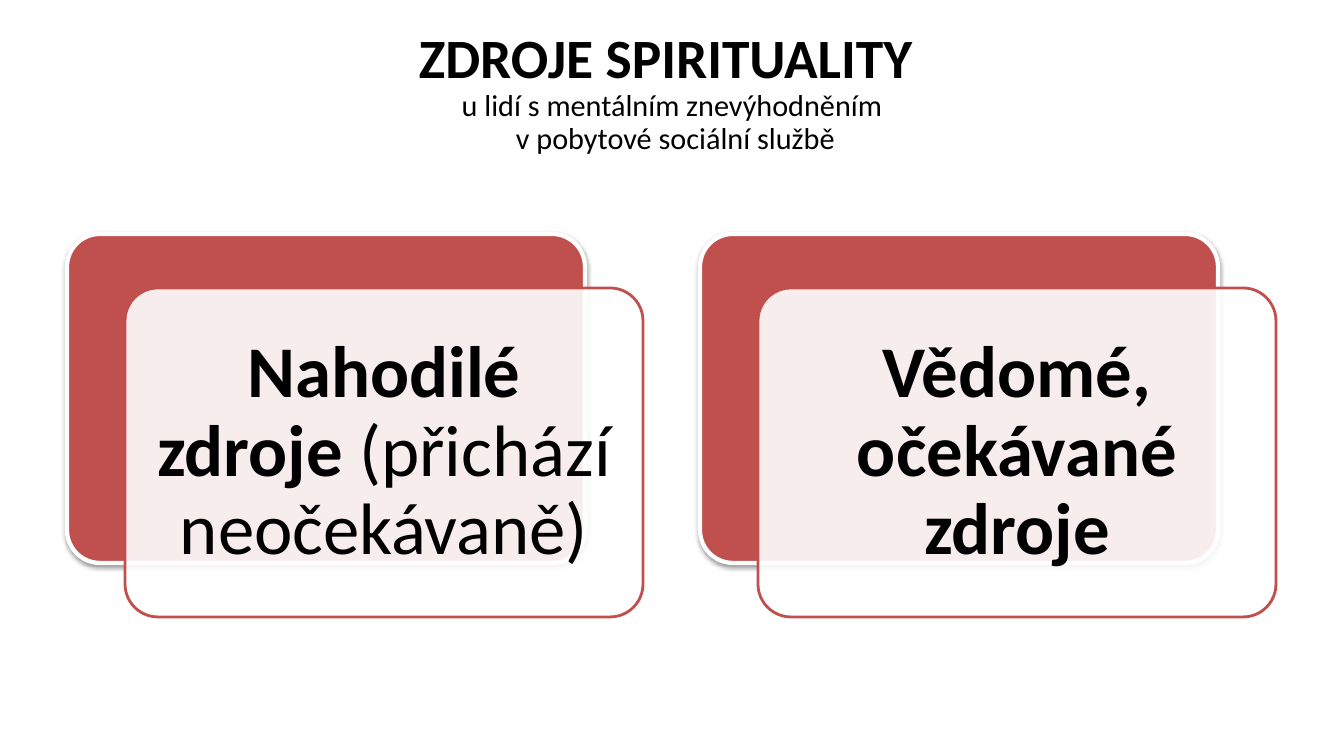
from copy import deepcopy

from lxml import etree
from pptx import Presentation
from pptx import util as u
from pptx.dml.color import RGBColor
from pptx.enum import shapes, text
from pptx.oxml.ns import qn

PX = 914400 / 100.8
RED = RGBColor(0xC0, 0x50, 0x4D)
WHITE = RGBColor(0xFF, 0xFF, 0xFF)
BLACK = RGBColor(0, 0, 0)


def px(*lengths):
    return [u.Emu(round(length * PX)) for length in lengths]


def add_run(paragraph, words, size, bold):
    run = paragraph.add_run()
    run.text = words
    for key, value in {"name": "Calibri", "size": u.Pt(size), "bold": bold}.items():
        setattr(run.font, key, value)
    run.font.color.rgb = BLACK
    return run


prs = Presentation()
prs.slide_width, prs.slide_height = px(1344, 756)
slide = prs.slides.add_slide(prs.slide_layouts[5])

# Title with a two-line subtitle
title = slide.shapes.title
title.left, title.top, title.width, title.height = px(67, 30, 1210, 126)
frame = title.text_frame
frame.auto_size = text.MSO_AUTO_SIZE.NONE
frame.vertical_anchor = text.MSO_ANCHOR.MIDDLE
heading = frame.paragraphs[0]
heading.alignment = text.PP_ALIGN.CENTER
heading.line_spacing = 0.9
TITLE_LINES = [
    ("ZDROJE SPIRITUALITY ", 39.6, True),
    ("u lidí s mentálním znevýhodněním", 21.6, False),
    (" v pobytové sociální službě", 21.6, False),
]
for index, (words, size, bold) in enumerate(TITLE_LINES):
    run = add_run(heading, words, size, bold)
    if index < len(TITLE_LINES) - 1:
        # The break keeps the size of the line it ends
        heading.add_line_break()
        heading._p[-1].append(deepcopy(run._r.rPr))

# Two cards: a red back plate, a translucent front plate and its label
CARD_W, CARD_H = 518, 329
CARD_LEFT, CARD_TOP, CARD_STEP = 67, 234, 633
FRONT_DX, FRONT_DY = 58, 54
LABEL_INSET, LABEL_MARGIN = 10, 22
SOURCES = [
    [("Nahodilé zdroje ", True), ("(přichází neočekávaně)", False)],
    [("Vědomé, očekávané zdroje", True)],
]
for index, source in enumerate(SOURCES):
    left = CARD_LEFT + index * CARD_STEP
    front_left, front_top = left + FRONT_DX, CARD_TOP + FRONT_DY
    plates = []
    for x, y, fill, line, width in [
        (left, CARD_TOP, RED, WHITE, 3),
        (front_left, front_top, WHITE, RED, 2),
    ]:
        plate = slide.shapes.add_shape(
            shapes.MSO_SHAPE.ROUNDED_RECTANGLE, *px(x, y, CARD_W, CARD_H))
        plate.adjustments[0] = 0.1
        plate.fill.solid()
        plate.fill.fore_color.rgb = fill
        plate.line.color.rgb = line
        plate.line.width = u.Pt(width)
        plate.shadow.inherit = False
        plates.append(plate)
    back, front = plates

    # Soft shadow below the back plate
    effects = back._element.spPr.find(qn("a:effectLst"))
    shadow = etree.SubElement(effects, qn("a:outerShdw"), blurRad="40000",
                              dist="20000", dir="5400000", rotWithShape="0")
    shade = etree.SubElement(shadow, qn("a:srgbClr"), val=str(BLACK))
    etree.SubElement(shade, qn("a:alpha"), val="38000")

    # Front plate at 90 % opacity
    front_color = front._element.spPr.find(qn("a:solidFill"))[0]
    etree.SubElement(front_color, qn("a:alpha"), val="90000")

    # Label
    label = slide.shapes.add_textbox(*px(
        front_left + LABEL_INSET, front_top + LABEL_INSET,
        CARD_W - 2 * LABEL_INSET, CARD_H - 2 * LABEL_INSET))
    frame = label.text_frame
    frame.word_wrap = True
    frame.vertical_anchor = text.MSO_ANCHOR.MIDDLE
    for side in ("left", "top", "right", "bottom"):
        setattr(frame, f"margin_{side}", px(LABEL_MARGIN)[0])
    paragraph = frame.paragraphs[0]
    paragraph.alignment = text.PP_ALIGN.CENTER
    paragraph.line_spacing = 0.9
    for words, bold in source:
        add_run(paragraph, words, 52, bold)

prs.save("out.pptx")
